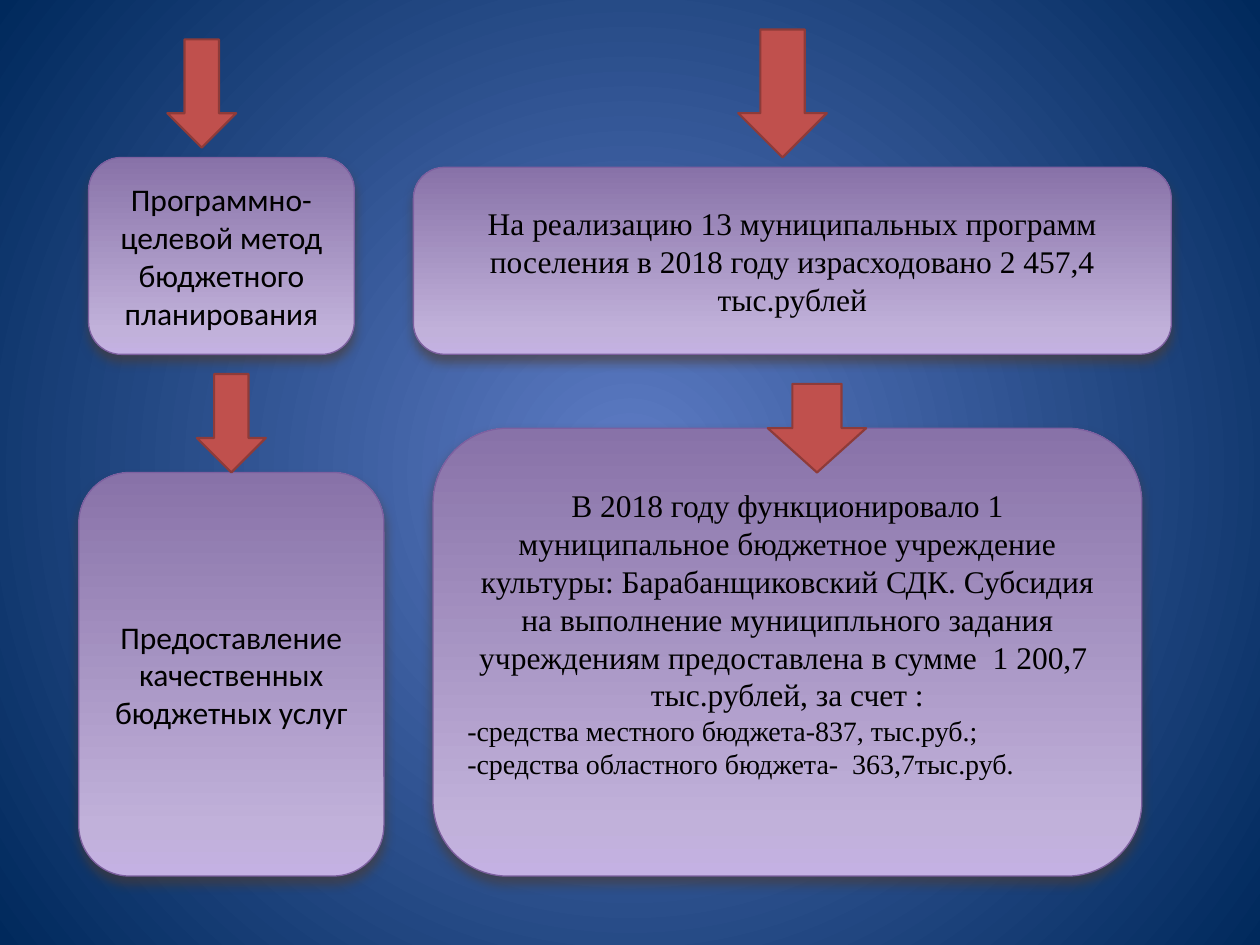
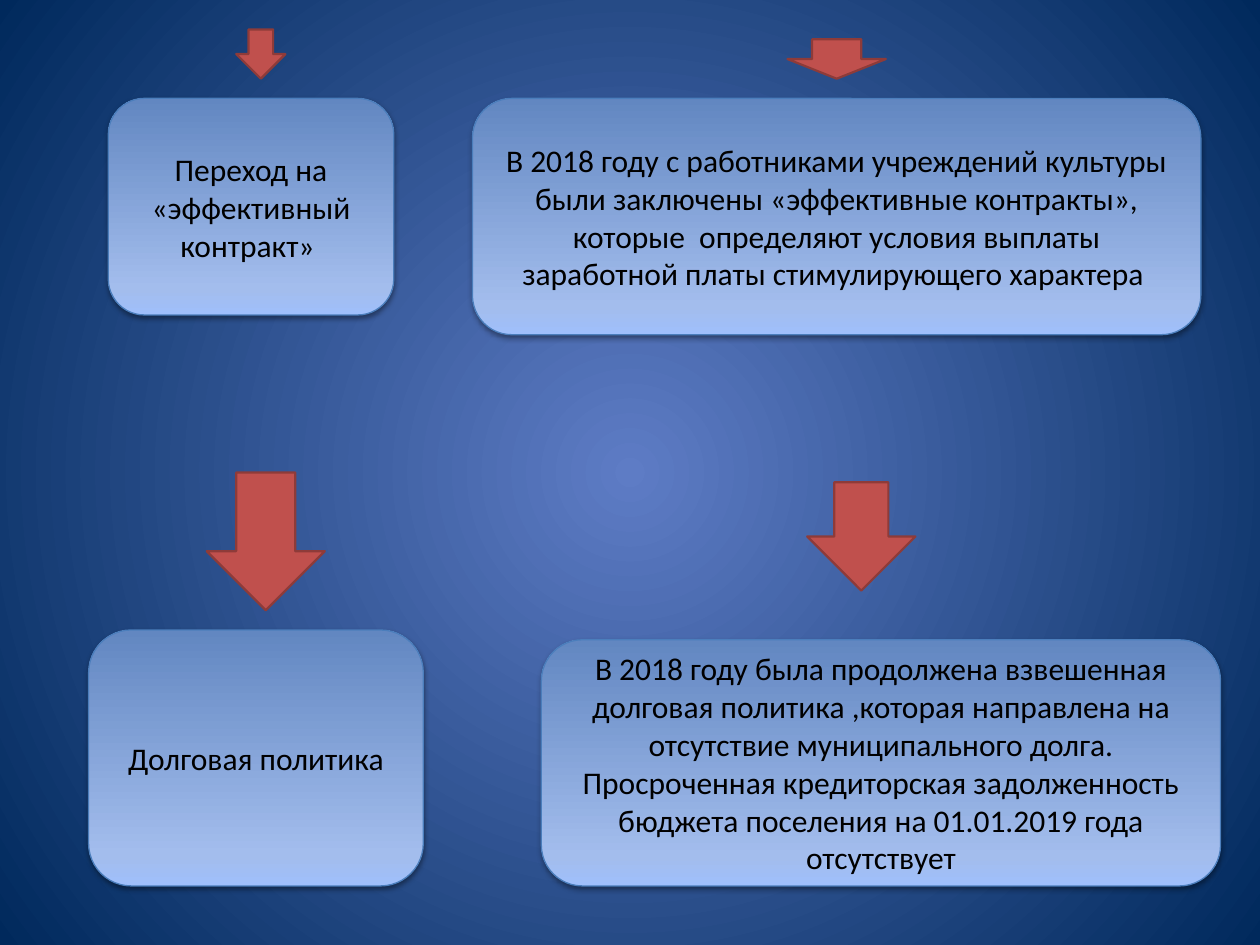
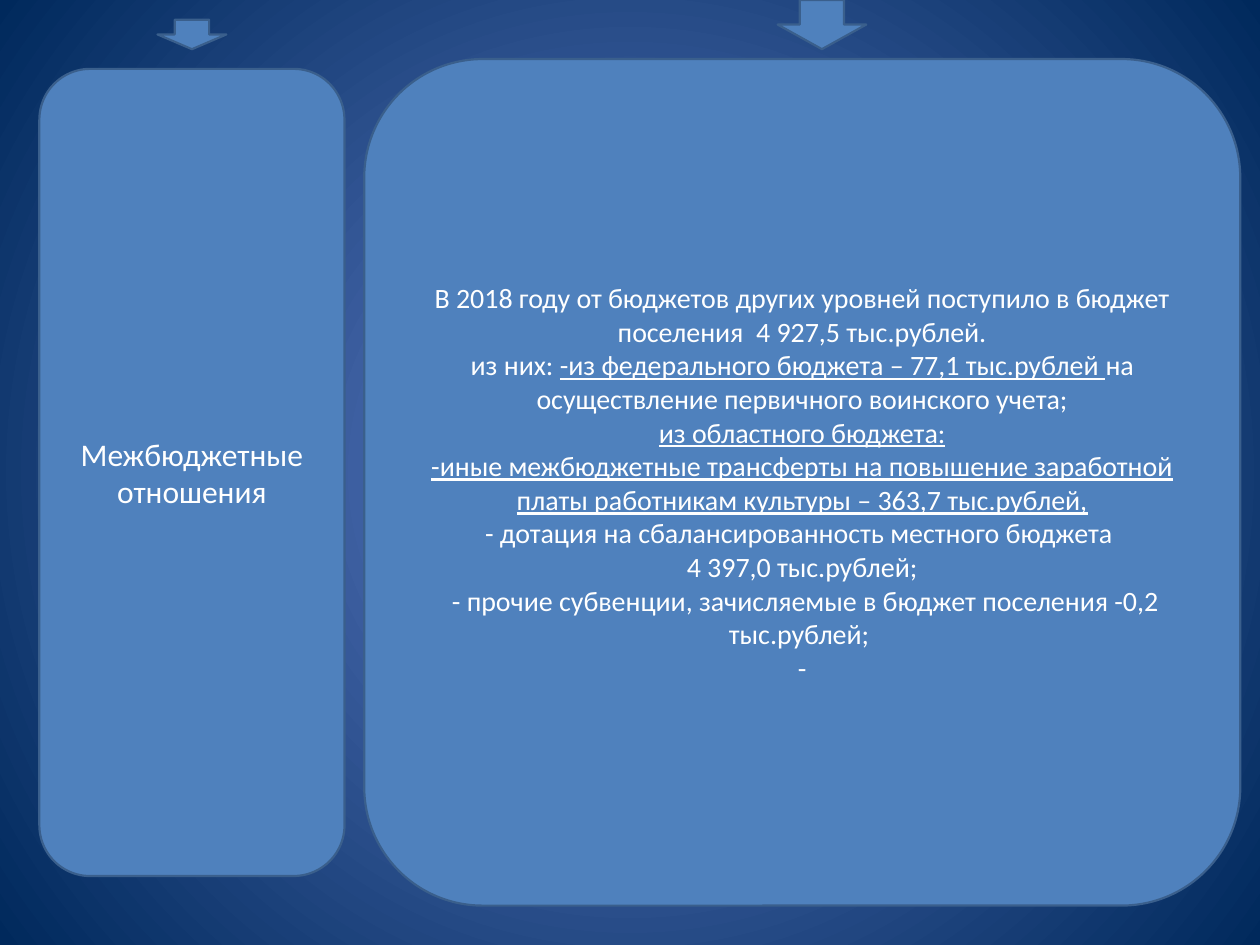
"""Build three slides on budget policy results, with boxes and arrows on a 128 by 96 grid."""
from lxml import etree
from pptx import Presentation
from pptx import util as u
from pptx.dml import color
from pptx.enum import shapes, text
from pptx.oxml import ns

WIDTH, HEIGHT = 720, 540
CELL = WIDTH / 128
SERIF = "Times New Roman"
BACKDROP = [(0, "5E7CC5"), (100, "00295C")]

PURPLE = {"stops": [(0, "C4B1E3"), (12, "C1B1DA"), (100, "8872A8")], "line": "7D60A0",
          "weight": 0.75, "ink": "000000", "shadow": ("4E3B30", 60, 6, 4)}
SKY = {"stops": [(0, "9FBFFB"), (12, "A3BDED"), (100, "6287C1")], "line": "4B7EBC",
       "weight": 0.75, "ink": "000000", "shadow": ("000000", 38, 3.1, 1.6)}
BLUE = {"fill": "4F81BD", "line": "3A5F8C", "weight": 1.25, "ink": "FFFFFF"}
RED = {"fill": "C0504D", "line": "8E3B39", "weight": 1.25}

# Boxes and arrows are (left, top, width, height) in cells; text between bars is underlined.
SLIDES = [
    {"box_style": PURPLE, "arrow_style": RED,
     "boxes": [
         {"at": (9, 16, 27, 20),
          "lines": ["Программно-целевой метод бюджетного планирования"]},
         {"at": (42, 17, 77, 19), "font": SERIF,
          "lines": ["На реализацию 13 муниципальных программ поселения в 2018 году "
                    "израсходовано 2 457,4 тыс.рублей"]},
         {"at": (8, 48, 31, 41),
          "lines": ["Предоставление качественных бюджетных услуг"]},
         {"at": (44, 43.5, 72, 45.5), "font": SERIF, "bottom": 25,
          "lines": ["В 2018 году функционировало 1 муниципальное бюджетное учреждение "
                    "культуры: Барабанщиковский СДК. Субсидия на выполнение муниципльного "
                    "задания учреждениям предоставлена в сумме  1 200,7  тыс.рублей, "
                    "за счет :"],
          "notes": ["-средства местного бюджета-837, тыс.руб.;",
                    "-средства областного бюджета-  363,7тыс.руб."]},
     ],
     "arrows": [(17, 4, 7, 11), (20, 38, 7, 10), (75, 3, 9, 13), (78, 39, 10, 9)]},
    {"box_style": SKY, "arrow_style": RED,
     "boxes": [
         {"at": (11, 10, 29, 22), "lines": ["Переход на «эффективный контракт» "]},
         {"at": (48, 10, 74, 24),
          "lines": ["В 2018 году с работниками учреждений культуры были заключены "
                    "«эффективные контракты», которые  определяют условия выплаты "
                    "заработной платы стимулирующего характера "]},
         {"at": (9, 64, 34, 26), "lines": ["Долговая политика"]},
         {"at": (55, 65, 69, 25),
          "lines": ["В 2018 году была продолжена взвешенная долговая политика ,которая "
                    "направлена на отсутствие муниципального долга. Просроченная "
                    "кредиторская задолженность бюджета поселения на 01.01.2019 года "
                    "отсутствует"]},
     ],
     "arrows": [(24, 3, 5, 5), (80, 4, 10, 4), (21, 48, 12, 14), (82, 49, 11, 11)]},
    {"box_style": BLUE, "arrow_style": BLUE,
     "boxes": [
         {"at": (4, 7, 31, 82), "lines": ["Межбюджетные отношения"]},
         {"at": (37, 6, 89, 86), "size": 16, "corner": 0.14,
          "lines": ["В 2018 году от бюджетов других уровней поступило в бюджет поселения  "
                    "4 927,5 тыс.рублей.",
                    "из них: |-из федерального бюджета – 77,1 тыс.рублей |на осуществление "
                    "первичного воинского учета;",
                    "|из областного бюджета:|",
                    "|-иные межбюджетные трансферты на повышение заработной платы "
                    "работникам культуры – 363,7 тыс.рублей,|",
                    "- дотация на сбалансированность местного бюджета ",
                    "4 397,0 тыс.рублей;",
                    " - прочие субвенции, зачисляемые в бюджет поселения -0,2 тыс.рублей; ",
                    "-"]},
     ],
     "arrows": [(16, 2, 7, 3), (79, 0, 9, 5)]},
]


def rgb(value):
    return color.RGBColor.from_string(value)


def add_node(parent, tag, **attributes):
    node = etree.SubElement(parent, ns.qn(tag))
    for name, value in attributes.items():
        node.set(name, str(value))
    return node


def fill_gradient(owner, fill, stops, radial=False):
    fill.gradient()
    gradient = owner.element.find(".//" + ns.qn("a:gradFill"))
    for child in list(gradient):
        gradient.remove(child)
    stop_list = add_node(gradient, "a:gsLst")
    for percent, value in stops:
        stop = add_node(stop_list, "a:gs", pos=percent * 1000)
        add_node(stop, "a:srgbClr", val=value)
    if radial:
        route = add_node(gradient, "a:path", path="circle")
        add_node(route, "a:fillToRect", l=50000, t=50000, r=50000, b=50000)
    else:
        add_node(gradient, "a:lin", ang=270 * 60000, scaled=0)


def add_shadow(shape, value, opacity, blur, distance):
    effects = shape.element.spPr.find(ns.qn("a:effectLst"))
    shadow = add_node(effects, "a:outerShdw", blurRad=u.Pt(blur), dist=u.Pt(distance),
                      dir=90 * 60000, rotWithShape=0)
    tint = add_node(shadow, "a:srgbClr", val=value)
    add_node(tint, "a:alpha", val=opacity * 1000)


def add_styled_shape(page, kind, at, style):
    shape = page.shapes.add_shape(kind, *[u.Pt(CELL * cells) for cells in at])
    shape.shadow.inherit = False
    if "stops" in style:
        fill_gradient(shape, shape.fill, style["stops"])
    else:
        shape.fill.solid()
        shape.fill.fore_color.rgb = rgb(style["fill"])
    shape.line.color.rgb = rgb(style["line"])
    shape.line.width = u.Pt(style["weight"])
    if "shadow" in style:
        add_shadow(shape, *style["shadow"])
    return shape


def write(para, content, *, font="Calibri", size=18, ink="000000", align="CENTER"):
    para.alignment = text.PP_ALIGN[align]
    for index, piece in enumerate(content.split("|")):
        if piece:
            span = para.add_run()
            span.text = piece
            span.font.name = font
            span.font.size = u.Pt(size)
            span.font.color.rgb = rgb(ink)
            span.font.underline = index % 2 == 1


def add_box(page, style, at, lines, notes=(), font="Calibri", size=18, bottom=3.6, corner=None):
    box = add_styled_shape(page, shapes.MSO_SHAPE.ROUNDED_RECTANGLE, at, style)
    if corner:
        box.adjustments[0] = corner
    frame = box.text_frame
    frame.word_wrap = True
    frame.vertical_anchor = text.MSO_ANCHOR.MIDDLE
    frame.margin_bottom = u.Pt(bottom)
    rows = [(line, size, "CENTER") for line in lines] + [(note, 16, "LEFT") for note in notes]
    for index, (content, points, align) in enumerate(rows):
        para = frame.add_paragraph() if index else frame.paragraphs[0]
        write(para, content, font=font, size=points, ink=style["ink"], align=align)


def main():
    deck = Presentation()
    deck.slide_width, deck.slide_height = u.Pt(WIDTH), u.Pt(HEIGHT)
    master = deck.slide_master
    fill_gradient(master, master.background.fill, BACKDROP, radial=True)
    for content in SLIDES:
        page = deck.slides.add_slide(deck.slide_layouts[6])
        for box in content["boxes"]:
            add_box(page, content["box_style"], **box)
        for at in content["arrows"]:
            add_styled_shape(page, shapes.MSO_SHAPE.DOWN_ARROW, at, content["arrow_style"])
    deck.save("out.pptx")


if __name__ == "__main__":
    main()
